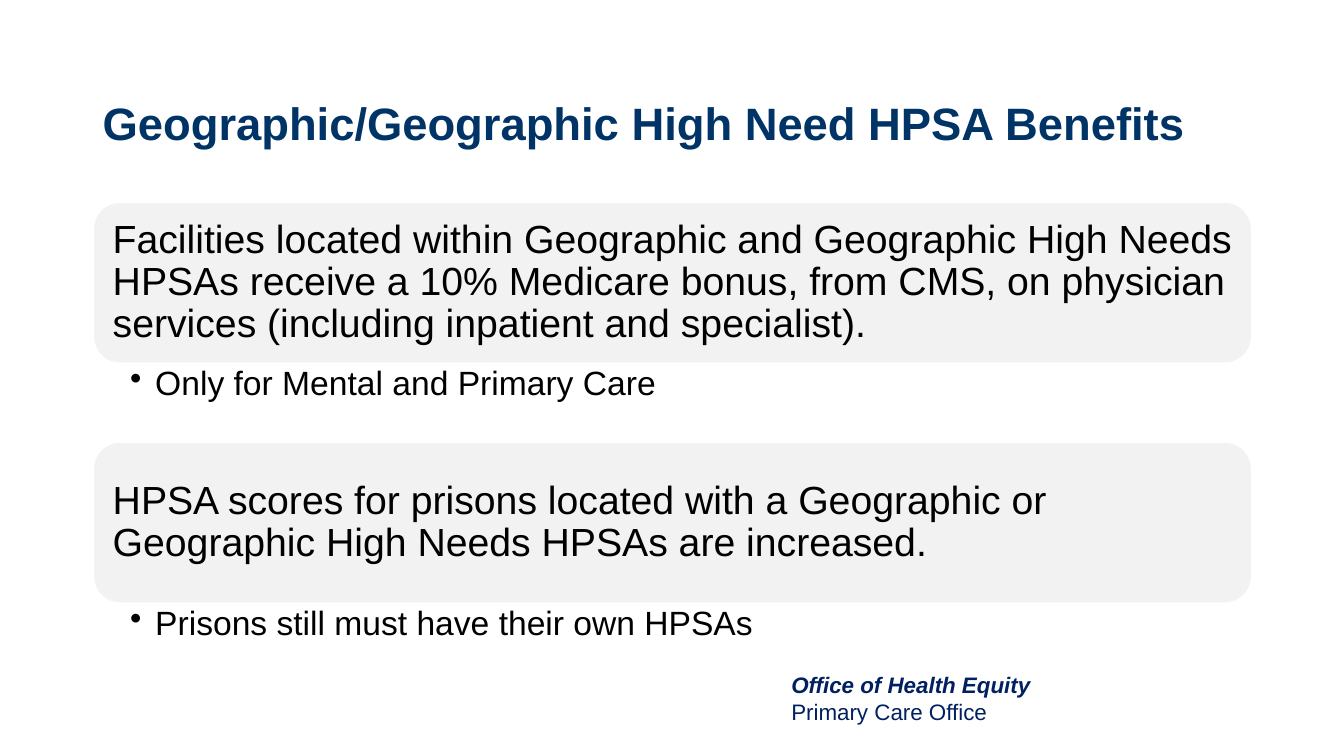
import dataclasses

import lxml.etree
import pptx
import pptx.dml.color
import pptx.enum.shapes
import pptx.enum.text
import pptx.oxml.ns
import pptx.util

SCALE = 9144  # EMU in one px, 100 px to the inch
LEFT, WIDTH = 92, 1150
CARD, NOTE = 161, 76  # heights
TOP, STEP = 200, 238
MIDDLE = pptx.enum.text.MSO_ANCHOR.MIDDLE


@dataclasses.dataclass
class Benefit:
    text: str
    note: str


@dataclasses.dataclass
class Look:
    size: float
    color: str = "000000"
    bold: bool = False
    slant: bool = False


BENEFITS = [
    Benefit("Facilities located within Geographic and Geographic High Needs HPSAs "
            "receive a 10% Medicare bonus, from CMS, on physician services "
            "(including inpatient and specialist).",
            "Only for Mental and Primary Care"),
    Benefit("HPSA scores for prisons located with a Geographic or Geographic "
            "High Needs HPSAs are increased.",
            "Prisons still must have their own HPSAs"),
]


def px(count: int) -> pptx.util.Emu:
    return pptx.util.Emu(count * SCALE)


def color(code: str) -> pptx.dml.color.RGBColor:
    return pptx.dml.color.RGBColor.from_string(code)


def style(para, look: Look) -> None:
    para.alignment = pptx.enum.text.PP_ALIGN.LEFT
    for run in para.runs:
        font = run.font
        font.name = "Arial"
        font.size = pptx.util.Pt(look.size)
        font.bold, font.italic = look.bold, look.slant
        font.color.rgb = color(look.color)


def inset(frame, left: int, top: int, right: int, base: int) -> None:
    frame.margin_left, frame.margin_top = px(left), px(top)
    frame.margin_right, frame.margin_bottom = px(right), px(base)


def add_text(slide, box: tuple[int, int, int, int], text: str, looks: list[Look]):
    frame = slide.shapes.add_textbox(*map(px, box)).text_frame
    frame.word_wrap = True
    frame.text = text
    for para, look in zip(frame.paragraphs, looks):
        style(para, look)
    return frame


def add_card(slide, top: int, text: str) -> None:
    kind = pptx.enum.shapes.MSO_SHAPE.ROUNDED_RECTANGLE
    card = slide.shapes.add_shape(kind, px(LEFT), px(top), px(WIDTH), px(CARD))
    card.shadow.inherit = False
    card.fill.solid()
    card.fill.fore_color.rgb = color("F2F2F2")
    card.line.color.rgb = color("FFFFFF")
    card.line.width = pptx.util.Pt(2)
    frame = card.text_frame
    frame.word_wrap = True
    frame.vertical_anchor = MIDDLE
    inset(frame, 12, 12, 12, 12)
    frame.text = text
    para = frame.paragraphs[0]
    para.line_spacing = 0.9
    style(para, Look(28))


def add_note(slide, top: int, text: str) -> None:
    frame = add_text(slide, (LEFT, top, WIDTH, NOTE), text, [Look(24)])
    inset(frame, 37, 3, 19, 3)
    para = frame.paragraphs[0]
    para.line_spacing = 0.9
    # Hanging bullet
    props = para._p.get_or_add_pPr()
    props.set("marL", str(px(25)))
    props.set("indent", str(px(-25)))
    mark = lxml.etree.SubElement(props, pptx.oxml.ns.qn("a:buChar"))
    mark.set("char", "•")


def main() -> None:
    deck = pptx.Presentation()
    deck.slide_width, deck.slide_height = px(1333), px(750)
    slide = deck.slides.add_slide(deck.slide_layouts[6])

    # Title
    title = add_text(slide, (LEFT, 59, WIDTH, 124),
                     "Geographic/Geographic High Need HPSA Benefits",
                     [Look(32.4, "003366", bold=True)])
    title.vertical_anchor = MIDDLE

    # Benefits, each with its note below
    for row, item in enumerate(BENEFITS):
        top = TOP + row * STEP
        add_card(slide, top, item.text)
        add_note(slide, top + CARD, item.note)

    # Office name
    add_text(slide, (775, 661, 274, 64),
             "Office of Health Equity\nPrimary Care Office",
             [Look(16, "002060", bold=True, slant=True), Look(16, "002060")])

    deck.save("out.pptx")


if __name__ == "__main__":
    main()
